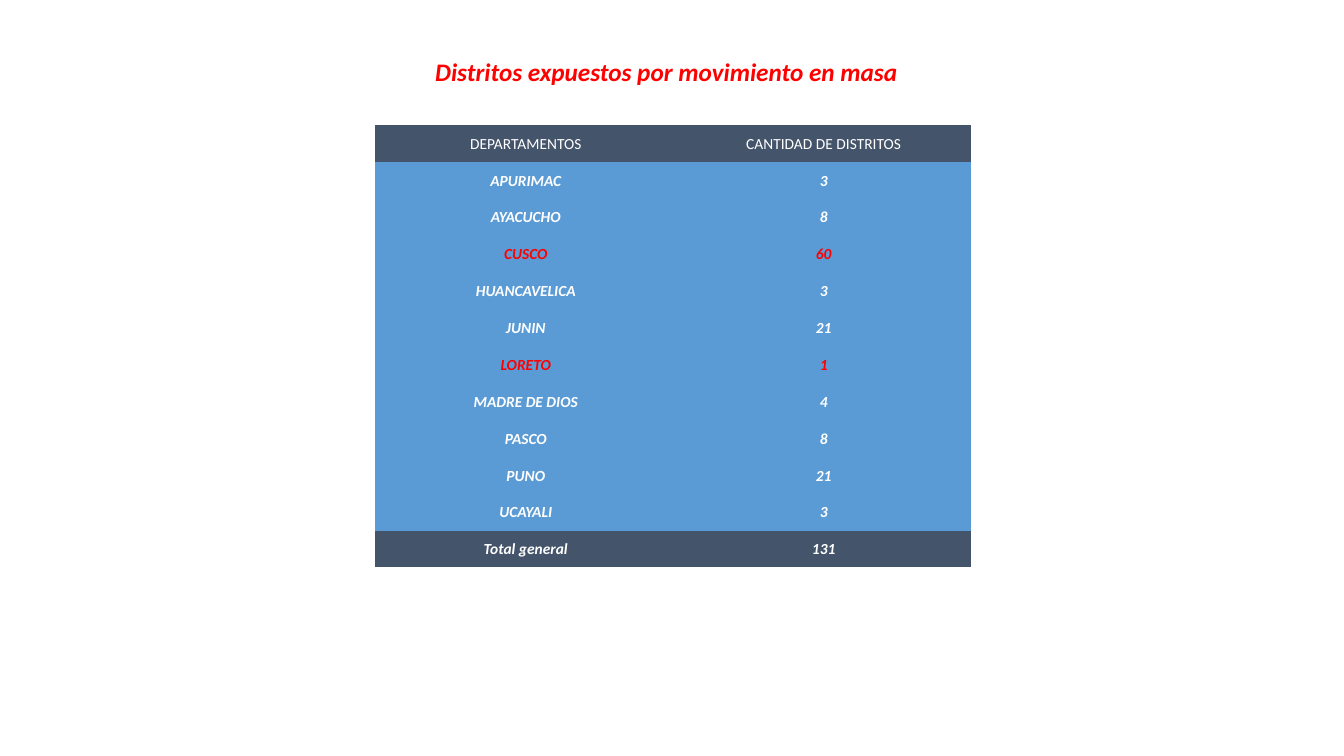
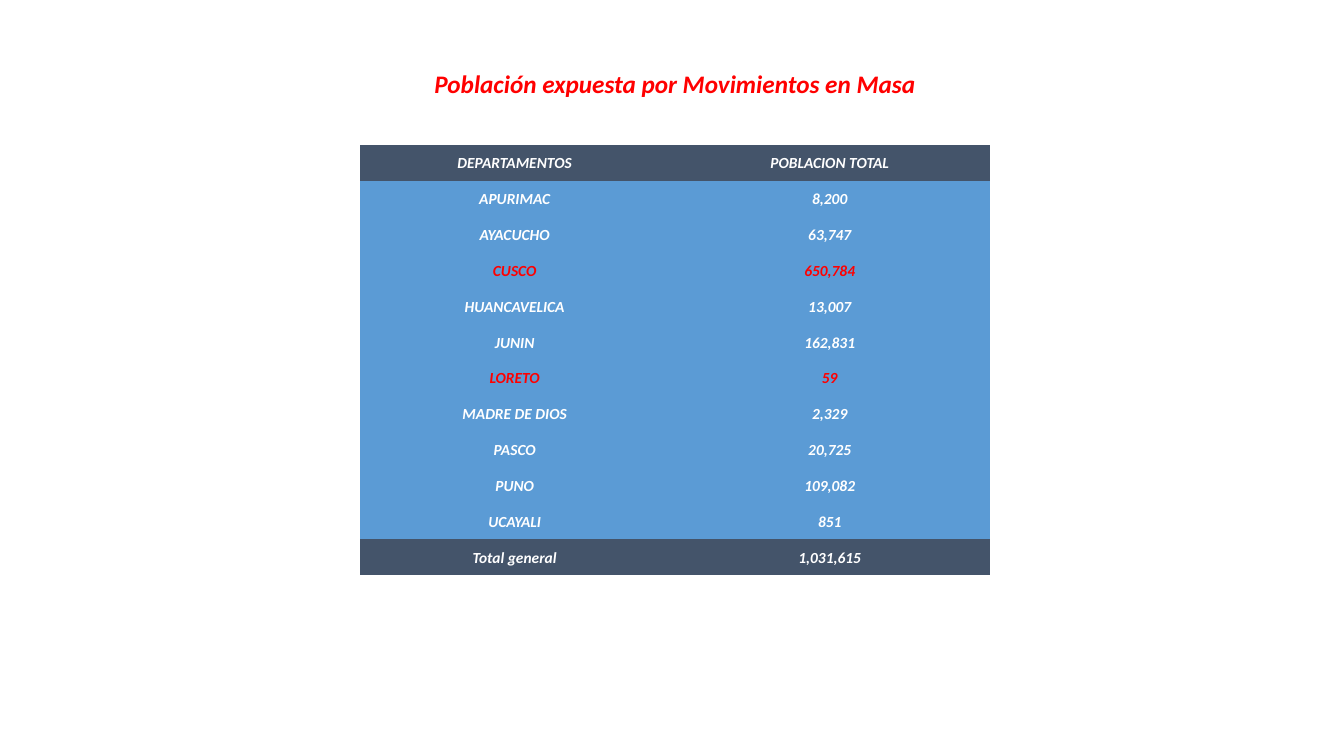
from dataclasses import dataclass

from pptx import Presentation
from pptx.dml.color import RGBColor
from pptx.enum.text import MSO_ANCHOR, PP_ALIGN
from pptx.oxml.ns import qn
from pptx.util import Inches, Pt


@dataclass(frozen=True)
class Theme:
    font: str = "Calibri"
    title: Pt = Pt(18)
    body: Pt = Pt(11)
    red: RGBColor = RGBColor(0xFF, 0x00, 0x00)
    white: RGBColor = RGBColor(0xFF, 0xFF, 0xFF)
    dark: RGBColor = RGBColor(0x44, 0x54, 0x6A)
    blue: RGBColor = RGBColor(0x5B, 0x9B, 0xD5)
    plain: str = "{2D5ABB26-0587-4C30-8999-92F81FD0307C}"  # no style, no grid


THEME = Theme()

AREAS = ["APURIMAC", "AYACUCHO", "CUSCO", "HUANCAVELICA", "JUNIN", "LORETO",
         "MADRE DE DIOS", "PASCO", "PUNO", "UCAYALI"]
MARKED = {"CUSCO", "LORETO"}

# Boxes are left, top, width, height in inches
SLIDES = [
    dict(
        title="Distritos expuestos por movimiento en masa",
        place=(4.16, 0.51, 4.9, 0.4),
        head="CANTIDAD DE DISTRITOS",
        strong=False,
        values=["3", "8", "60", "3", "21", "1", "4", "8", "21", "3"],
        total="131",
        table=(3.72, 1.24, 5.91, 4.39),
        cols=(2.99, 2.92),
    ),
    dict(
        title="Población expuesta por Movimientos en Masa",
        place=(4.18, 0.63, 5.03, 0.4),
        head="POBLACION TOTAL",
        strong=True,
        values=["8,200", "63,747", "650,784", "13,007", "162,831", "59",
                "2,329", "20,725", "109,082", "851"],
        total="1,031,615",
        table=(3.57, 1.44, 6.26, 4.27),
        cols=(3.07, 3.18),
    ),
]


def write(frame, words, size, color, strong=True):
    """Put one centred line in a text frame; strong is bold italic."""
    line = frame.paragraphs[0]
    line.text = words
    line.alignment = PP_ALIGN.CENTER
    font = line.font
    font.name, font.size = THEME.font, size
    font.bold = font.italic = strong
    font.color.rgb = color


def add_title(slide, data):
    box = slide.shapes.add_textbox(*map(Inches, data["place"]))
    box.text_frame.word_wrap = False
    write(box.text_frame, data["title"], THEME.title, THEME.red)


def fill_cell(cell, words, back, color, strong):
    cell.fill.solid()
    cell.fill.fore_color.rgb = back
    cell.vertical_anchor = MSO_ANCHOR.MIDDLE
    cell.margin_left = cell.margin_right = cell.margin_top = Inches(0.01)
    cell.margin_bottom = 0
    write(cell.text_frame, words, THEME.body, color, strong)


def add_grid(slide, data):
    rows = [("DEPARTAMENTOS", data["head"]),
            *zip(AREAS, data["values"]),
            ("Total general", data["total"])]
    last = len(rows) - 1
    place = map(Inches, data["table"])
    grid = slide.shapes.add_table(len(rows), 2, *place).table
    grid.first_row = grid.horz_banding = False
    grid._tbl.tblPr.find(qn("a:tableStyleId")).text = THEME.plain
    for col, width in zip(grid.columns, data["cols"]):
        col.width = Inches(width)
    for r, row in enumerate(rows):
        back = THEME.dark if r in (0, last) else THEME.blue
        color = THEME.red if row[0] in MARKED else THEME.white
        strong = r > 0 or data["strong"]
        for c, words in enumerate(row):
            fill_cell(grid.cell(r, c), words, back, color, strong)


def main():
    deck = Presentation()
    deck.slide_width, deck.slide_height = Inches(13.33), Inches(7.5)
    for data in SLIDES:
        slide = deck.slides.add_slide(deck.slide_layouts[6])
        add_title(slide, data)
        add_grid(slide, data)
    deck.save("out.pptx")


if __name__ == "__main__":
    main()
